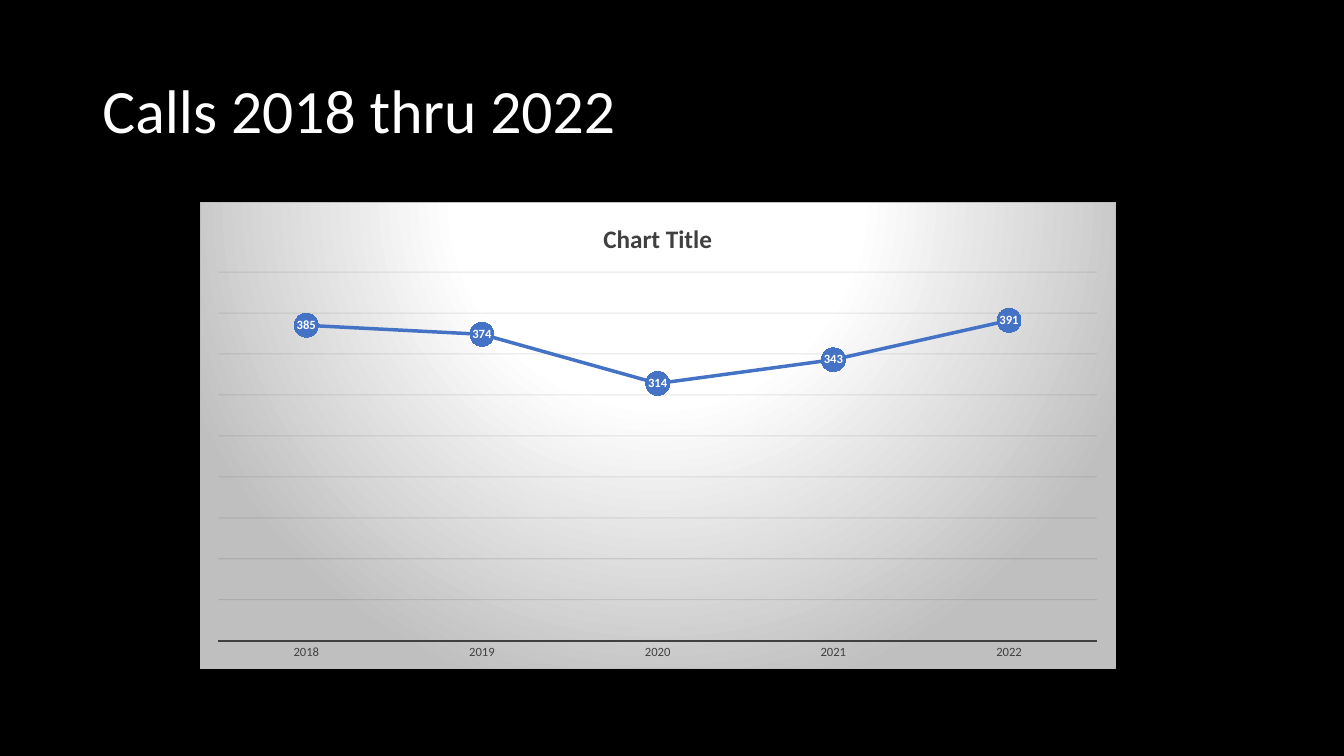
from typing import NamedTuple

from lxml.etree import SubElement
from pptx import Presentation
from pptx.chart.chart import Chart
from pptx.chart.data import CategoryChartData
from pptx.dml.color import RGBColor
from pptx.enum.chart import (XL_CHART_TYPE, XL_LABEL_POSITION, XL_MARKER_STYLE,
                             XL_TICK_LABEL_POSITION, XL_TICK_MARK)
from pptx.enum.text import MSO_ANCHOR, PP_ALIGN
from pptx.oxml import parse_xml
from pptx.oxml.ns import nsdecls, qn
from pptx.slide import Slide
from pptx.text.text import Font
from pptx.util import Pt

FONT = "Calibri"
BLACK, WHITE, BLUE, GRAY, DARK = "000000", "FFFFFF", "4472C4", "BFBFBF", "404040"


class YearCalls(NamedTuple):
    year: str
    calls: int


CALLS = [YearCalls("2018", 385), YearCalls("2019", 374), YearCalls("2020", 314),
         YearCalls("2021", 343), YearCalls("2022", 391)]


def rgb(code: str) -> RGBColor:
    return RGBColor.from_string(code)


def style_font(font: Font, size: float, color: str, bold: bool = False) -> None:
    font.name, font.size, font.bold = FONT, Pt(size), bold
    font.color.rgb = rgb(color)


def add_title(slide: Slide) -> None:
    title = slide.shapes.title
    title.left, title.top, title.width, title.height = Pt(66), Pt(28.8), Pt(828), Pt(104.4)
    frame = title.text_frame
    frame.text = "Calls 2018 thru 2022"
    frame.vertical_anchor = MSO_ANCHOR.MIDDLE
    heading = frame.paragraphs[0]
    heading.alignment = PP_ALIGN.LEFT
    heading.line_spacing = 0.9
    style_font(heading.runs[0].font, 44, WHITE)


def style_background(chart: Chart) -> None:
    """Radial gradient centred above the chart, with a thin border."""
    stops = "".join(f'<a:gs pos="{share * 1000}"><a:srgbClr val="{color}"/></a:gs>'
                    for share, color in [(0, WHITE), (39, WHITE), (100, GRAY)])
    area = parse_xml(
        f'<c:spPr {nsdecls("c", "a")}><a:gradFill><a:gsLst>{stops}</a:gsLst>'
        '<a:path path="circle">'
        '<a:fillToRect l="50000" t="-80000" r="50000" b="180000"/></a:path></a:gradFill>'
        f'<a:ln w="9525"><a:solidFill><a:srgbClr val="{GRAY}"/></a:solidFill></a:ln></c:spPr>')
    chart.element.find(qn("c:chart")).addnext(area)


def place_plot(chart: Chart) -> None:
    """Fix the inner plot area as fractions of the chart."""
    plot_area = chart.element.find(qn("c:chart")).find(qn("c:plotArea"))
    for automatic in plot_area.findall(qn("c:layout")):
        plot_area.remove(automatic)
    fractions = "".join(f'<c:{key} val="{value}"/>' for key, value in
                        [("x", 0.02), ("y", 0.15), ("w", 0.96), ("h", 0.79)])
    plot_area.insert(0, parse_xml(
        f'<c:layout {nsdecls("c")}><c:manualLayout><c:layoutTarget val="inner"/>'
        '<c:xMode val="edge"/><c:yMode val="edge"/>'
        f'{fractions}</c:manualLayout></c:layout>'))


def style_axes(chart: Chart) -> None:
    years = chart.category_axis
    years.major_tick_mark = years.minor_tick_mark = XL_TICK_MARK.NONE
    years.tick_label_position = XL_TICK_LABEL_POSITION.NEXT_TO_AXIS
    years.format.line.width = Pt(1.5)
    years.format.line.color.rgb = rgb(DARK)
    style_font(years.tick_labels.font, 9, DARK)

    counts = chart.value_axis
    counts.minimum_scale, counts.maximum_scale, counts.major_unit = 0, 450, 50
    counts.visible = False
    counts.has_major_gridlines = True
    grid = counts.major_gridlines.format.line
    grid.width = Pt(0.75)
    grid.color.rgb = rgb("0D0D0D")
    # Gridlines show at 10 % opacity
    grid_color = next(counts.major_gridlines.format.line.fill._xPr.iter(qn("a:srgbClr")))
    SubElement(grid_color, qn("a:alpha")).set("val", "10000")


def style_series(chart: Chart) -> None:
    plot = chart.plots[0]
    plot.vary_by_categories = False
    calls = plot.series[0]
    calls.smooth = False
    calls.format.line.width = Pt(2.5)
    calls.format.line.color.rgb = rgb(BLUE)
    marker = calls.marker
    marker.style, marker.size = XL_MARKER_STYLE.CIRCLE, 17
    marker.format.fill.solid()
    marker.format.fill.fore_color.rgb = rgb(BLUE)
    marker.format.line.fill.background()
    labels = calls.data_labels
    labels.show_value = True
    labels.position = XL_LABEL_POSITION.CENTER
    style_font(labels.font, 9, WHITE, bold=True)


def add_calls_chart(slide: Slide) -> None:
    data = CategoryChartData()
    data.categories = [entry.year for entry in CALLS]
    data.add_series("Series 1", [entry.calls for entry in CALLS])
    chart = slide.shapes.add_chart(XL_CHART_TYPE.LINE_MARKERS, Pt(142.56), Pt(144),
                                   Pt(654.48), Pt(334.08), data).chart
    style_font(chart.font, 10, WHITE)
    chart.has_legend = False
    chart.has_title = True
    caption = chart.chart_title.text_frame
    caption.text = "Chart Title"
    style_font(caption.paragraphs[0].runs[0].font, 18, DARK, bold=True)
    chart.chart_title.include_in_layout = False
    style_background(chart)
    place_plot(chart)
    style_axes(chart)
    style_series(chart)


def main() -> None:
    deck = Presentation()
    deck.slide_width, deck.slide_height = Pt(960), Pt(540)
    slide = deck.slides.add_slide(deck.slide_layouts[5])
    slide.background.fill.solid()
    slide.background.fill.fore_color.rgb = rgb(BLACK)
    add_title(slide)
    add_calls_chart(slide)
    deck.save("out.pptx")


if __name__ == "__main__":
    main()
